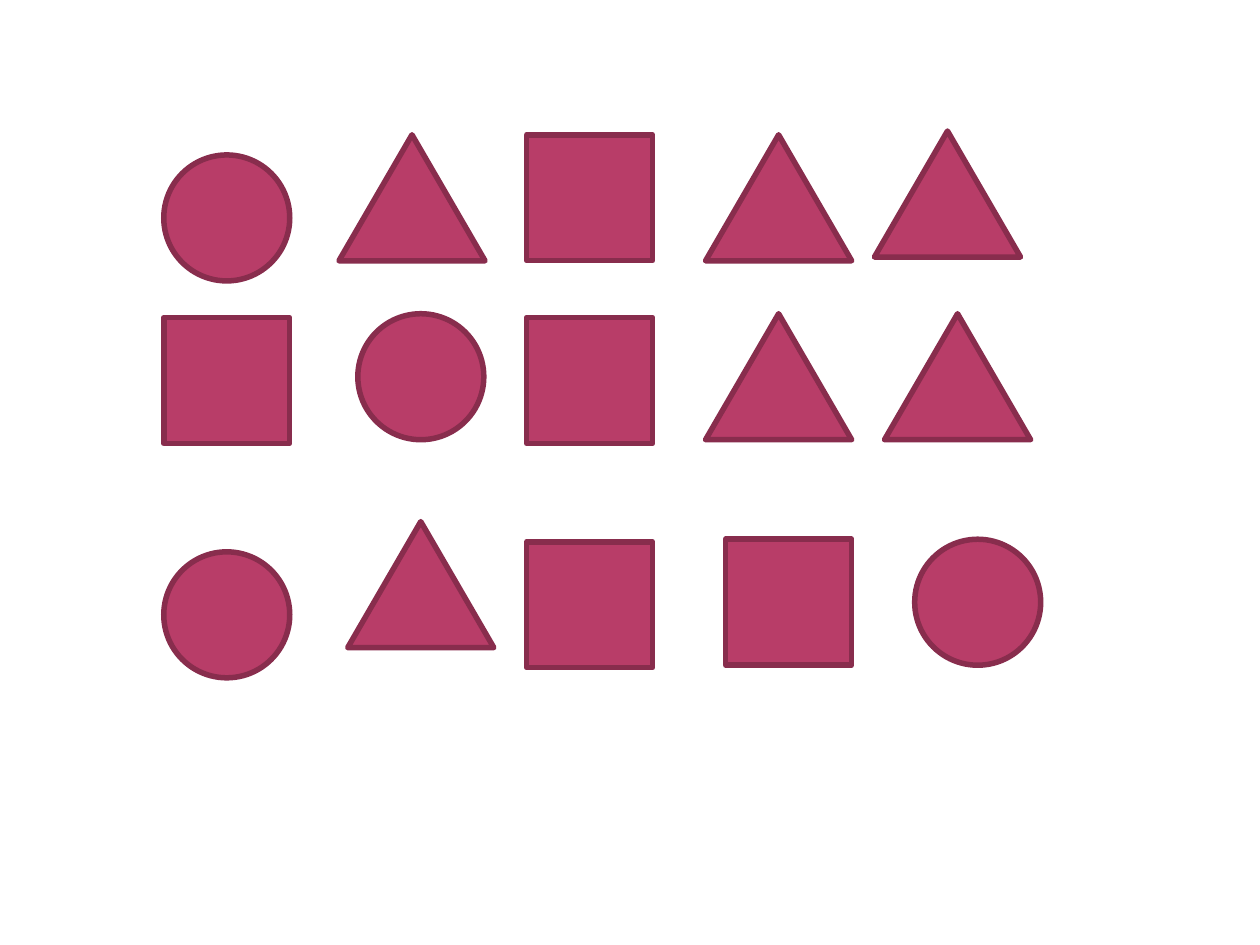
"""Build a slide with three rows of circles, triangles and squares."""
from pptx import Presentation
from pptx.dml.color import RGBColor
from pptx.enum.shapes import MSO_SHAPE as Shape
from pptx.util import Inches, Pt

COLORS = {"fill": "B83D68", "line": "882D4D"}
LINE_WIDTH = 3.15
HEIGHT = 1
KINDS = {
    "circle": (Shape.OVAL, 1),
    "square": (Shape.RECTANGLE, 1),
    "triangle": (Shape.ISOSCELES_TRIANGLE, 1.16),
}
ROWS = [
    [("circle", 1.3, 1.23), ("triangle", 2.69, 1.07), ("square", 4.18, 1.07),
     ("triangle", 5.6, 1.07), ("triangle", 6.94, 1.04)],
    [("square", 1.3, 2.52), ("circle", 2.84, 2.49), ("square", 4.18, 2.52),
     ("triangle", 5.6, 2.49), ("triangle", 7.02, 2.49)],
    [("circle", 1.3, 4.38), ("triangle", 2.76, 4.14), ("square", 4.18, 4.3),
     ("square", 5.76, 4.28), ("circle", 7.26, 4.28)],
]


def add_figure(page, kind, left, top):
    preset, width = KINDS[kind]
    figure = page.shapes.add_shape(
        preset, Inches(left), Inches(top), Inches(width), Inches(HEIGHT))
    figure.shadow.inherit = False
    figure.fill.solid()
    figure.fill.fore_color.rgb = RGBColor.from_string(COLORS["fill"])
    figure.line.color.rgb = RGBColor.from_string(COLORS["line"])
    figure.line.width = Pt(LINE_WIDTH)


def main():
    deck = Presentation()
    deck.slide_width, deck.slide_height = Inches(10), Inches(7.5)
    page = deck.slides.add_slide(deck.slide_layouts[6])
    for row in ROWS:
        for kind, left, top in row:
            add_figure(page, kind, left, top)
    deck.save("out.pptx")


if __name__ == "__main__":
    main()
